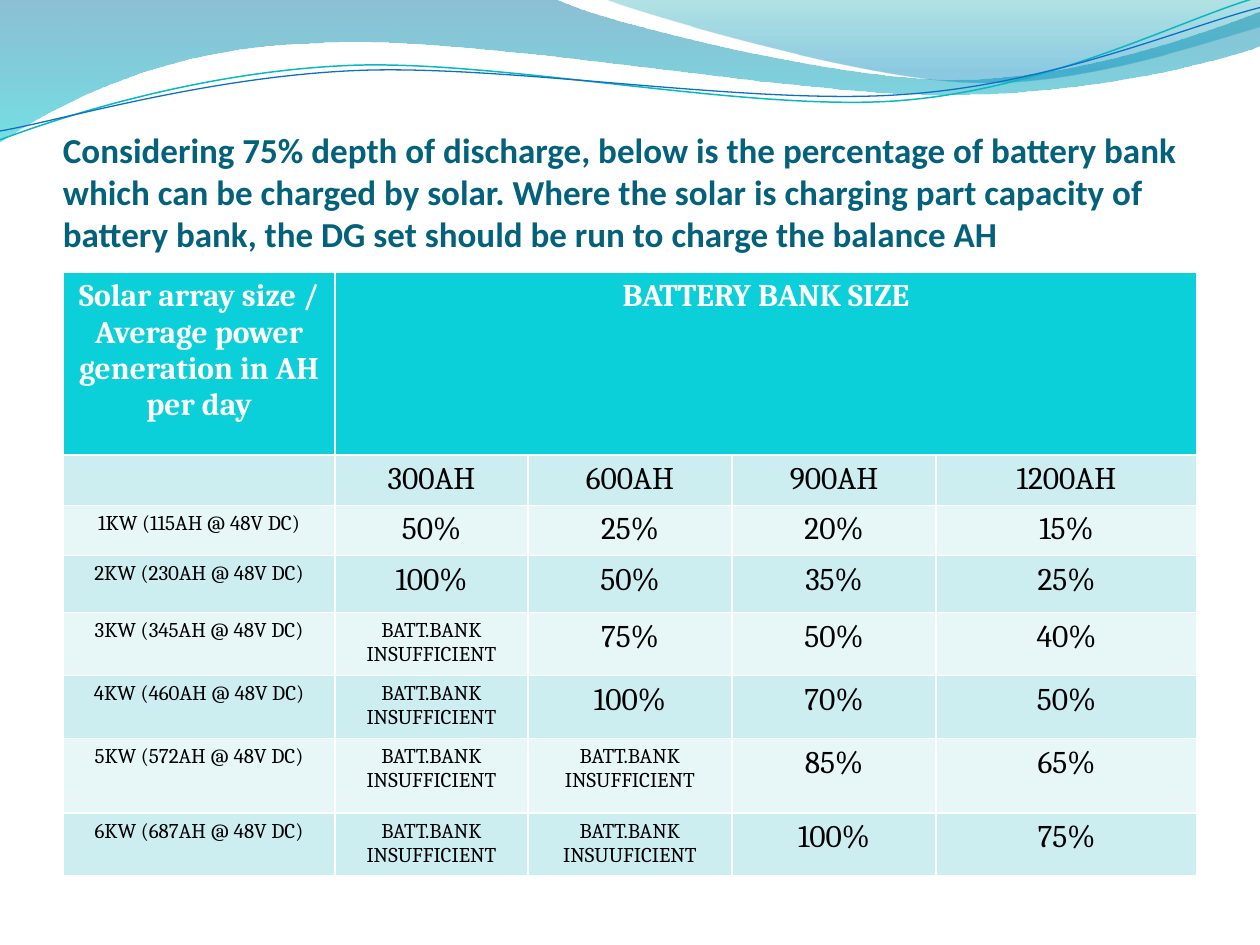
import pptx
import pptx.dml.color
import pptx.enum.text
import pptx.oxml
import pptx.oxml.ns
import pptx.util

Inches = pptx.util.Inches
Pt = pptx.util.Pt
qn = pptx.oxml.ns.qn
CENTER = pptx.enum.text.PP_ALIGN.CENTER
SPACE = pptx.oxml.ns.nsdecls("a")


def color(code):
    return pptx.dml.color.RGBColor.from_string(code)


class Deck:
    head = "0BD0D9"
    bands = ("CCEEF1", "E7F7F8")
    white = "FFFFFF"
    black = "000000"
    title = "04617B"
    sans = "Calibri"
    serif = "Cambria"

    def __init__(self, wide, high):
        self.file = pptx.Presentation()
        self.file.slide_width = Inches(wide)
        self.file.slide_height = Inches(high)
        self.slide = self.file.slides.add_slide(self.file.slide_layouts[6])

    def outline(self, path, close):
        """Draw a path of lines (2 numbers) and cubic curves (6 numbers)."""
        points = [(Inches(part[i]), Inches(part[i + 1]))
                  for part in path for i in range(0, len(part), 2)]
        form = self.slide.shapes.build_freeform(*points[0], scale=1.0)
        form.add_line_segments(points[1:], close=close)
        shape = form.convert_to_shape()
        shape.shadow.inherit = False

        # Join each three straight steps of a curve into one cubic step
        steps = iter(list(shape._element.spPr.iter(qn("a:lnTo"))))
        for part in path[1:]:
            first = next(steps)
            if len(part) == 6:
                cubic = pptx.oxml.parse_xml(f"<a:cubicBezTo {SPACE}/>")
                first.addprevious(cubic)
                for step in (first, next(steps), next(steps)):
                    cubic.append(step[0])
                    step.getparent().remove(step)
        return shape

    def wave(self, path, stops):
        shape = self.outline(path, True)
        shape.line.fill.background()
        shape.fill.gradient()
        shape.fill.gradient_angle = 270
        for stop, (place, code, solid) in zip(shape.fill.gradient_stops, stops):
            stop.position = place
            stop.color.rgb = color(code)
        tints = list(shape._element.spPr.iter(qn("a:srgbClr")))
        for tint, (place, code, solid) in zip(tints, stops):
            tint.append(pptx.oxml.parse_xml(
                f'<a:alpha {SPACE} val="{solid * 1000}"/>'))

    def curve(self, path, code, width):
        shape = self.outline(path, False)
        shape.fill.background()
        shape.line.color.rgb = color(code)
        shape.line.width = Pt(width)

    def run(self, para, text, size, face, code, bold=False):
        run = para.add_run()
        run.text = text
        font = run.font
        font.size, font.name, font.bold = Pt(size), face, bold
        font.color.rgb = color(code)

    def text(self, box, text, size):
        frame = self.slide.shapes.add_textbox(*map(Inches, box)).text_frame
        frame.word_wrap = True
        frame.vertical_anchor = pptx.enum.text.MSO_ANCHOR.BOTTOM
        frame.margin_left = frame.margin_right = frame.margin_bottom = 0
        self.run(frame.paragraphs[0], text, size, self.sans, self.title, True)

    def table(self, box, cols, rows, data):
        """Fill a table; its default style gives the white cell borders."""
        frame = self.slide.shapes.add_table(
            len(rows), len(cols), *map(Inches, box))
        table = frame.table
        for col, width in zip(table.columns, cols):
            col.width = Inches(width)
        for row, height in zip(table.rows, rows):
            row.height = Inches(height)
        for r, line in enumerate(data):
            top = r == 0
            for c, text in enumerate(line):
                cell = table.cell(r, c)
                cell.fill.solid()
                cell.fill.fore_color.rgb = color(
                    self.head if top else self.bands[(r - 1) % 2])
                if not text:
                    continue
                para = cell.text_frame.paragraphs[0]
                para.alignment = CENTER
                small = r > 1 and not text.endswith("%")
                self.run(para, text, 12 if small else 18, self.serif,
                         self.white if top else self.black, top)
        table.cell(0, 1).merge(table.cell(0, len(cols) - 1))


def main():
    deck = Deck(10, 7.5)

    # Waves along the top
    deck.wave([(0, 0), (4.4, -0.01),
               (4.76, 0.17, 6.64, 0.63, 7.58, 0.63),
               (8.53, 0.63, 9.58, 0.26, 10, 0.09), (10.01, 0.36),
               (9.83, 0.44, 8.7, 0.76, 7.46, 0.75),
               (6.22, 0.75, 3.82, 0.28, 2.57, 0.34),
               (1.29, 0.36, 0.46, 0.83, -0.01, 1.13), (0, 0)],
              [(0, "0074A1", 45), (1, "00C6CF", 55)])
    deck.wave([(4.79, -0.01),
               (5.09, 0.11, 6.82, 0.62, 7.69, 0.65),
               (8.56, 0.69, 9.61, 0.32, 10, 0.21), (10, 0), (4.79, -0.01)],
              [(0, "00A1A9", 30), (0.8, "008BBF", 45)])

    # Thin curves over the waves
    deck.curve([(0, 1.11),
                (0.48, 0.93, 1.58, 0.57, 2.77, 0.52),
                (3.95, 0.47, 5.93, 0.89, 7.13, 0.8),
                (8.33, 0.71, 9.38, 0.15, 9.98, -0.02)], "0AB8BF", 0.85)
    deck.curve([(0, 1.04),
                (0.47, 0.96, 1.64, 0.61, 2.83, 0.56),
                (4.03, 0.51, 5.97, 0.84, 7.17, 0.75),
                (8.36, 0.67, 9.41, 0.21, 10, 0.06)], "0F6FC6", 0.75)

    # Title
    deck.text((0.5, 0.77, 9, 1.25),
              "Considering 75% depth of discharge, below is the percentage of "
              "battery bank which can be charged by solar. Where the solar is "
              "charging part capacity of battery bank, the DG set should be "
              "run to charge the balance AH", 20)

    # Share of each battery bank charged by each array
    low = "BATT.BANK INSUFFICIENT"
    loads = [
        (115, "50%", "25%", "20%", "15%"),
        (230, "100%", "50%", "35%", "25%"),
        (345, low, "75%", "50%", "40%"),
        (460, low, "100%", "70%", "50%"),
        (572, low, low, "85%", "65%"),
        (687, low, "BATT.BANK INSUUFICIENT", "100%", "75%"),
    ]
    data = [
        ("Solar array size / Average power generation in AH per day",
         "BATTERY BANK SIZE", "", "", ""),
        ("", "300AH", "600AH", "900AH", "1200AH"),
    ]
    data += [(f"{kw}KW ({amps}AH @ 48V DC)", *share)
             for kw, (amps, *share) in enumerate(loads, 1)]
    deck.table((0.5, 2.16, 9, 4.78), (2.16, 1.53, 1.62, 1.62, 2.07),
               (1.45, 0.36, 0.36, 0.45, 0.45, 0.45, 0.59, 0.45), data)

    deck.file.save("out.pptx")


if __name__ == "__main__":
    main()
